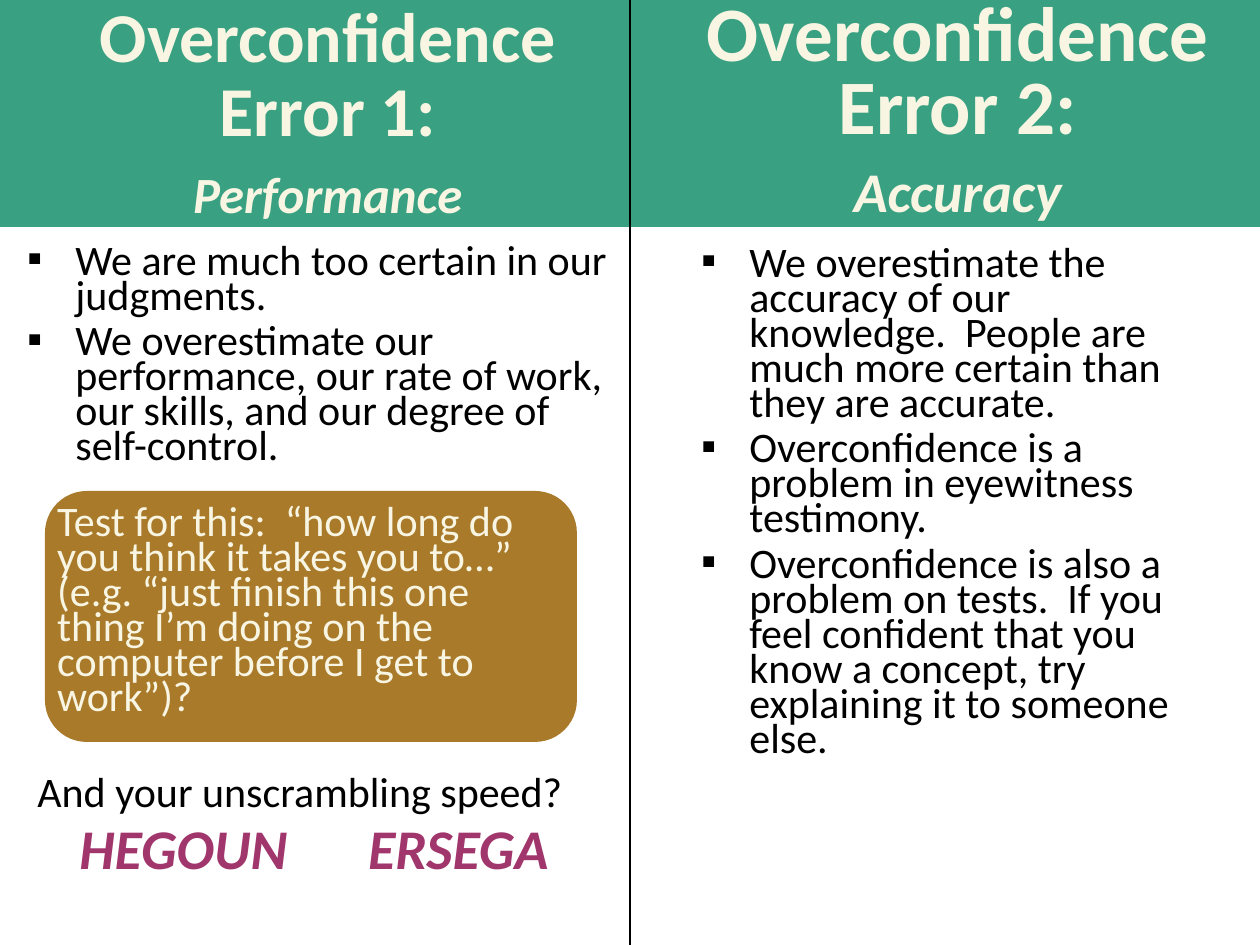
from dataclasses import dataclass

from lxml import etree
from pptx import Presentation
from pptx.dml.color import RGBColor
from pptx.enum.shapes import MSO_CONNECTOR, MSO_SHAPE
from pptx.enum.text import MSO_ANCHOR, MSO_AUTO_SIZE, PP_ALIGN
from pptx.oxml.ns import qn
from pptx.util import Pt

RECT, ROUND_RECT = MSO_SHAPE.RECTANGLE, MSO_SHAPE.ROUNDED_RECTANGLE
STRAIGHT = MSO_CONNECTOR.STRAIGHT
TOP, MIDDLE = MSO_ANCHOR.TOP, MSO_ANCHOR.MIDDLE
LEFT, CENTER = PP_ALIGN.LEFT, PP_ALIGN.CENTER
GROW, NO_FIT = MSO_AUTO_SIZE.SHAPE_TO_FIT_TEXT, MSO_AUTO_SIZE.NONE

EMU_PER_PX = 914400 / 126
WIDTH, HEIGHT = 1260, 945
HALF = WIDTH // 2
HEADER_HEIGHT = 227
INDENT = 48


@dataclass(frozen=True)
class Theme:
    font: str = "Calibri"
    green: str = "3AA082"
    brown: str = "AA7A2B"
    cream: str = "F8F6E3"
    purple: str = "A0366C"
    black: str = "000000"
    body: int = 24
    scramble: int = 32
    header_leading: int = 42
    body_leading: int = 20
    body_gap: int = 6
    rule: float = 1.5


THEME = Theme()

PERFORMANCE_POINTS = [
    "We are much too certain in our judgments.",
    "We overestimate our performance, our rate of work, our skills, "
    "and our degree of self-control.",
]
ACCURACY_POINTS = [
    "We overestimate the accuracy of our knowledge.  People are much more "
    "certain than they are accurate.",
    "Overconfidence is a problem in eyewitness testimony.",
    "Overconfidence is also a problem on tests.  If you feel confident that "
    "you know a concept, try explaining it to someone else.",
]
TEST_PROMPT = (
    "Test for this:  “how long do you think it takes you to…”  (e.g. “just "
    "finish this one thing I’m doing on the computer before I get to work”)?"
)


def px(n):
    return round(n * EMU_PER_PX)


def box(*lengths):
    return [px(n) for n in lengths]


def set_attrs(obj, values):
    for name, value in values.items():
        setattr(obj, name, value)


def add_run(p, text, size, color, **styles):
    r = p.add_run()
    r.text = text
    set_attrs(r.font, {"name": THEME.font, "size": Pt(size), **styles})
    r.font.color.rgb = RGBColor.from_string(color)


def add_bullet(p):
    """Give the paragraph a square bullet with a hanging indent."""
    pPr = p._p.get_or_add_pPr()
    pPr.set("marL", str(px(INDENT)))
    pPr.set("indent", str(-px(INDENT)))
    etree.SubElement(pPr, qn("a:buFont")).set("typeface", THEME.font)
    etree.SubElement(pPr, qn("a:buChar")).set("char", "▪")


def write_body(tf, texts, color=THEME.black, size=THEME.body, align=LEFT,
               bulleted=False, **styles):
    for i, text in enumerate(texts):
        p = tf.add_paragraph() if i else tf.paragraphs[0]
        set_attrs(p, {"alignment": align,
                      "line_spacing": Pt(THEME.body_leading),
                      "space_after": Pt(THEME.body_gap)})
        if bulleted:
            add_bullet(p)
        add_run(p, text, size, color, **styles)


def add_panel(s, kind, place, color):
    sp = s.shapes.add_shape(kind, *box(*place))
    sp.shadow.inherit = False
    sp.fill.solid()
    sp.fill.fore_color.rgb = RGBColor.from_string(color)
    sp.line.fill.background()
    sp.text_frame.word_wrap = True
    return sp


def add_header(s, left, title, title_size, subtitle, subtitle_size):
    sp = add_panel(s, RECT, (left, 0, HALF, HEADER_HEIGHT), THEME.green)
    tf = sp.text_frame
    set_attrs(tf, {"vertical_anchor": MIDDLE, "margin_left": px(38)})
    p = tf.paragraphs[0]
    set_attrs(p, {"alignment": CENTER,
                  "line_spacing": Pt(THEME.header_leading)})
    add_run(p, title, title_size, THEME.cream, bold=True)
    p.add_line_break()
    add_run(p, subtitle, subtitle_size, THEME.cream, bold=True, italic=True)


def add_text(s, place, texts, anchor=TOP, fit=GROW, wrap=True, **format_values):
    tf = s.shapes.add_textbox(*box(*place)).text_frame
    set_attrs(tf, {"word_wrap": wrap, "auto_size": fit,
                   "vertical_anchor": anchor})
    write_body(tf, texts, **format_values)


def add_bullets(s, place, texts):
    add_text(s, place, texts, anchor=MIDDLE, fit=NO_FIT, bulleted=True)


def add_scramble(s, place, word, wrap):
    add_text(s, place, [word], wrap=wrap, color=THEME.purple,
             size=THEME.scramble, align=CENTER, bold=True, italic=True)


def add_prompt(s, place, text):
    sp = add_panel(s, ROUND_RECT, place, THEME.brown)
    tf = sp.text_frame
    set_attrs(tf, {"margin_left": 0, "margin_right": 0,
                   "vertical_anchor": TOP, "auto_size": GROW})
    write_body(tf, [text], color=THEME.cream)


def add_divider(s):
    line = s.shapes.add_connector(STRAIGHT, *box(HALF, 0, HALF, HEIGHT))
    line.line.color.rgb = RGBColor.from_string(THEME.black)
    line.line.width = Pt(THEME.rule)
    etree.SubElement(line._element.spPr, qn("a:effectLst"))


def main():
    prs = Presentation()
    set_attrs(prs, {"slide_width": px(WIDTH), "slide_height": px(HEIGHT)})
    s = prs.slides.add_slide(prs.slide_layouts[6])

    add_header(s, 0, "Overconfidence Error 1:", 40, "Performance", 29)
    add_bullets(s, (15, 227, 615, 264), PERFORMANCE_POINTS)
    add_header(s, HALF, "Overconfidence Error 2:", 44, "Accuracy", 32)
    add_bullets(s, (689, 320, 512, 372), ACCURACY_POINTS)
    add_divider(s)

    add_prompt(s, (45, 491, 532, 251), TEST_PROMPT)
    add_text(s, (25, 775, 552, 50), ["And your unscrambling speed?"])
    add_scramble(s, (301, 840, 315, 54), "ERSEGA", wrap=True)
    add_scramble(s, (66, 840, 235, 54), "HEGOUN", wrap=False)

    prs.save("out.pptx")


if __name__ == "__main__":
    main()
